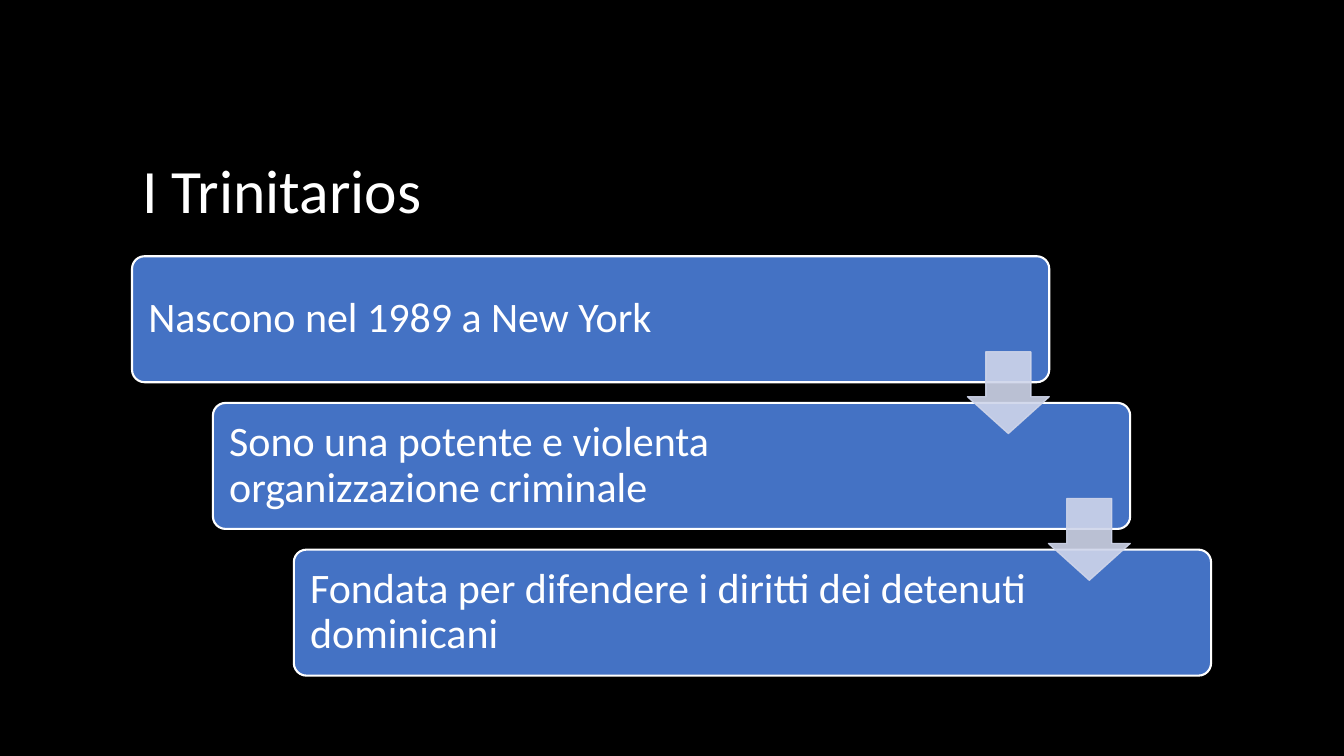
from lxml import etree
from pptx import Presentation
from pptx.dml.color import RGBColor
from pptx.enum.shapes import MSO_SHAPE
from pptx.enum.text import MSO_ANCHOR, MSO_AUTO_SIZE, PP_ALIGN
from pptx.oxml.ns import qn
from pptx.util import Pt

ROUNDED = MSO_SHAPE.ROUNDED_RECTANGLE
DOWN_ARROW = MSO_SHAPE.DOWN_ARROW
MIDDLE = MSO_ANCHOR.MIDDLE
NO_FIT = MSO_AUTO_SIZE.NONE
LEFT = PP_ALIGN.LEFT
TITLE_ONLY = 5

STEPS = [
    "Nascono nel 1989 a New York",
    "Sono una potente e violenta organizzazione criminale",
    "Fondata per difendere i diritti dei detenuti dominicani",
]
# Staircase geometry in points
FIRST_LEFT, FIRST_TOP = 94.3, 183
SHIFT_X, SHIFT_Y = 57.8, 104.8
STEP_WIDTH, STEP_HEIGHT = 655.2, 90
ARROW_SIZE, ARROW_DROP = 58.4, 68.3


def color(hex_string):
    return RGBColor.from_string(hex_string)


class SlideBuilder:
    font = "Calibri"
    background, text_color = "000000", "FFFFFF"
    step_fill, arrow_fill = "4472C4", "CFD5EA"
    arrow_opacity = 90

    def __init__(self, deck):
        self.page = deck.slides.add_slide(deck.slide_layouts[TITLE_ONLY])
        fill = self.page.background.fill
        fill.solid()
        fill.fore_color.rgb = color(self.background)

    def set_text(self, box, text, size):
        frame = box.text_frame
        frame.text = text
        frame.word_wrap = True
        frame.auto_size = NO_FIT
        frame.vertical_anchor = MIDDLE
        para = frame.paragraphs[0]
        para.alignment = LEFT
        para.line_spacing = 0.9
        span = para.runs[0]
        span.font.name = self.font
        span.font.size = Pt(size)
        span.font.color.rgb = color(self.text_color)

    def title(self, text, left, top, width, height):
        box = self.page.shapes.title
        box.left, box.top = Pt(left), Pt(top)
        box.width, box.height = Pt(width), Pt(height)
        self.set_text(box, text, 44)

    def shape(self, kind, left, top, width, height, fill, line, line_width):
        box = self.page.shapes.add_shape(kind, Pt(left), Pt(top), Pt(width), Pt(height))
        box.shadow.inherit = False
        box.fill.solid()
        box.fill.fore_color.rgb = color(fill)
        box.line.color.rgb = color(line)
        box.line.width = Pt(line_width)
        return box

    def step(self, text, left, top):
        box = self.shape(ROUNDED, left, top, STEP_WIDTH, STEP_HEIGHT,
                         self.step_fill, self.text_color, 1.5)
        box.adjustments[0] = 0.1
        frame = box.text_frame
        frame.margin_left = frame.margin_top = frame.margin_bottom = Pt(9)
        frame.margin_right = Pt(124)  # keeps the text clear of the arrows
        self.set_text(box, text, 30)

    def arrow(self, left, top):
        box = self.shape(DOWN_ARROW, left, top, ARROW_SIZE, ARROW_SIZE,
                         self.arrow_fill, self.arrow_fill, 1)
        box.adjustments[0] = 0.55
        box.adjustments[1] = 0.45
        # Make both fill and outline slightly transparent
        for tint in box._element.spPr.iter(qn("a:srgbClr")):
            alpha = etree.SubElement(tint, qn("a:alpha"))
            alpha.set("val", str(self.arrow_opacity * 1000))


def main():
    deck = Presentation()
    deck.slide_width, deck.slide_height = Pt(960), Pt(540)
    builder = SlideBuilder(deck)

    # Title
    builder.title("I Trinitarios", 94.3, 57.6, 771.1, 162)

    # Steps, each shifted right and down
    places = [(FIRST_LEFT + i * SHIFT_X, FIRST_TOP + i * SHIFT_Y)
              for i in range(len(STEPS))]
    for text, (left, top) in zip(STEPS, places):
        builder.step(text, left, top)

    # Arrows from each step to the next
    for left, top in places[:-1]:
        builder.arrow(left + STEP_WIDTH - ARROW_SIZE, top + ARROW_DROP)

    deck.save("out.pptx")


if __name__ == "__main__":
    main()
